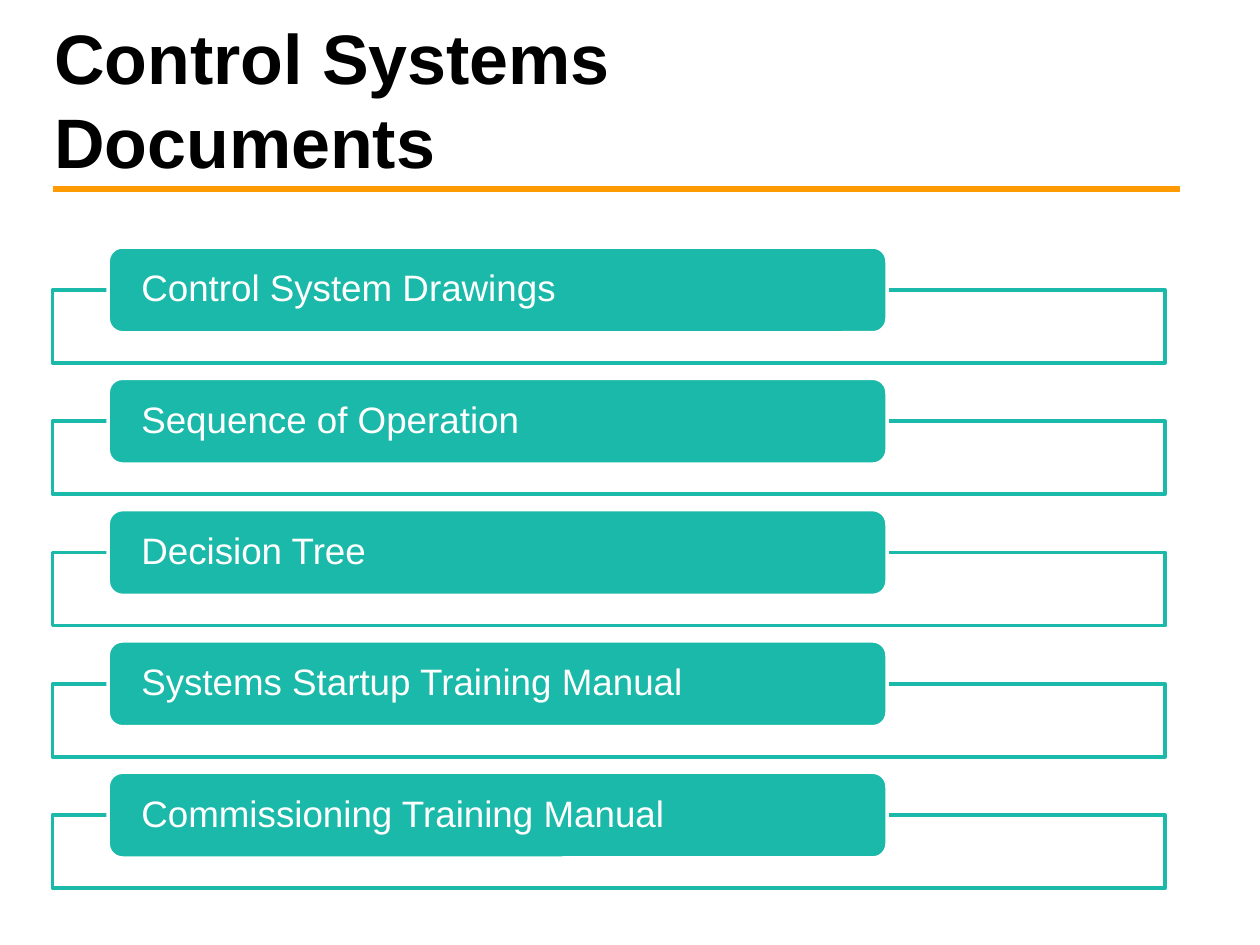
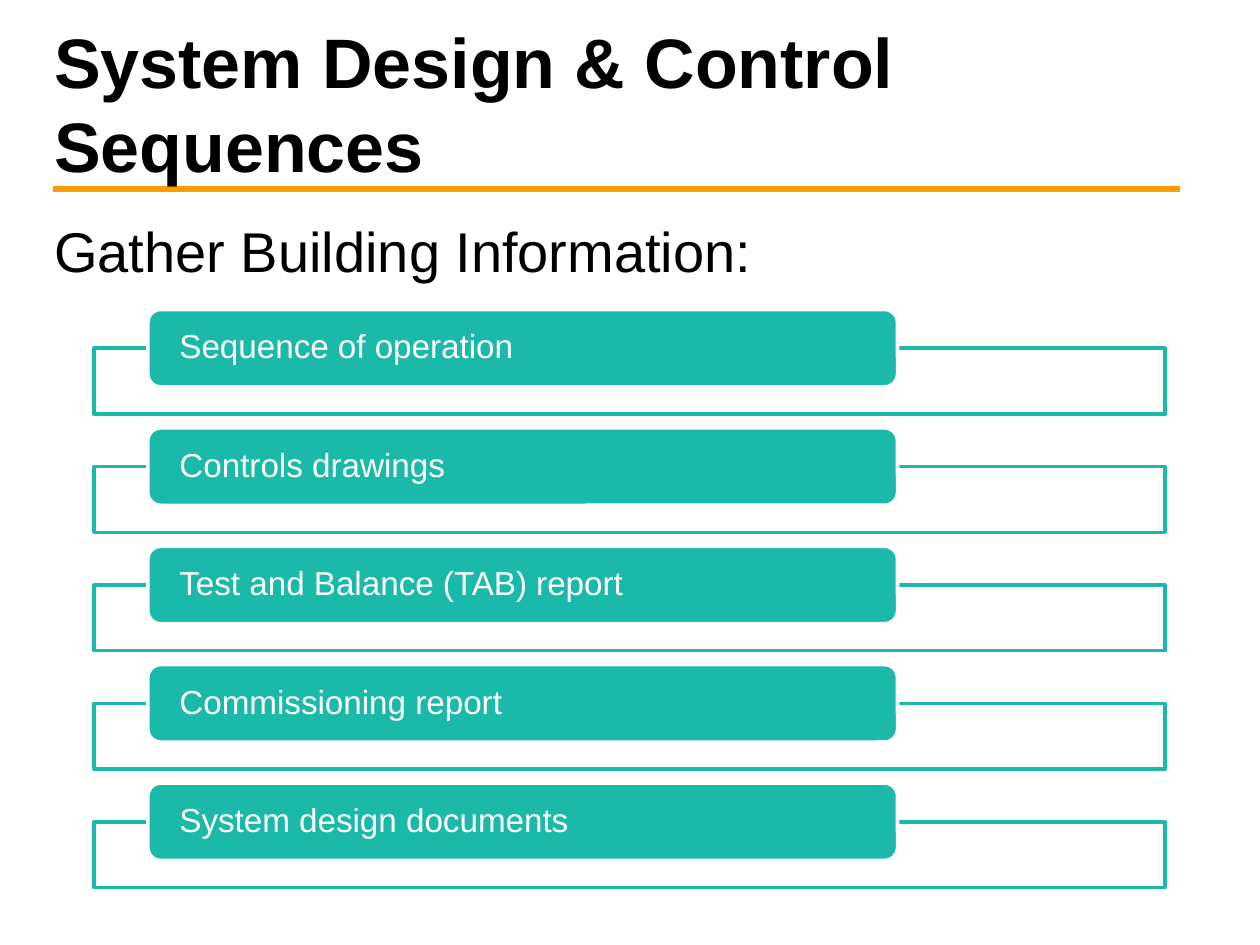
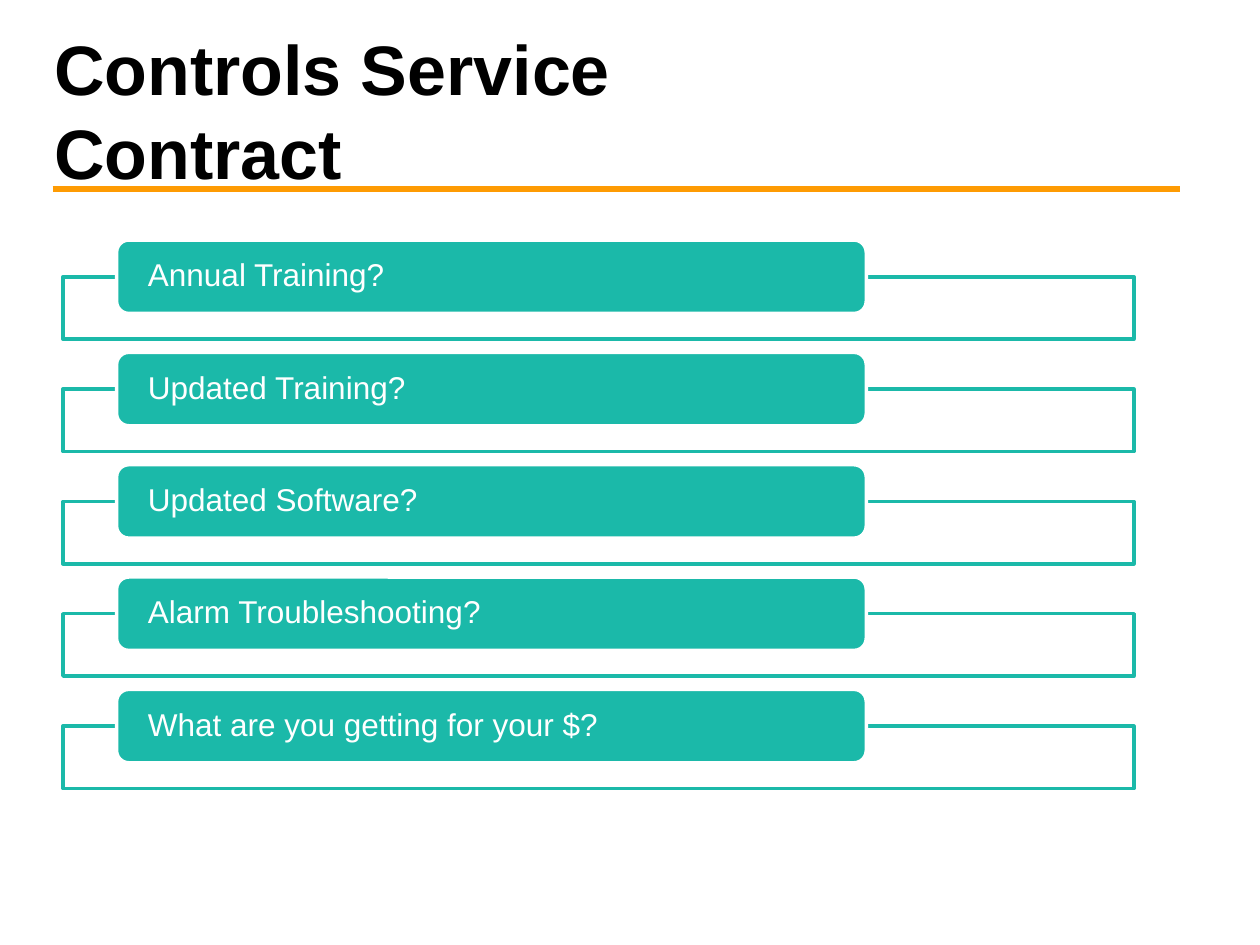
import pptx
import pptx.dml.color
import pptx.enum.shapes
import pptx.enum.text
import pptx.oxml
import pptx.oxml.ns
import pptx.util
from dataclasses import dataclass

Cm, Pt = pptx.util.Cm, pptx.util.Pt
RGB = pptx.dml.color.RGBColor.from_string
SHAPE = pptx.enum.shapes.MSO_SHAPE
ANCHOR = pptx.enum.text.MSO_ANCHOR
LEFT = pptx.enum.text.PP_ALIGN.LEFT
NSDECL = pptx.oxml.ns.nsdecls("a")


@dataclass(frozen=True)
class Theme:
    font: str = "Arial"
    ink: str = "000000"
    paper: str = "FFFFFF"
    teal: str = "1BB9A9"
    orange: str = "FE9B03"
    title_size: int = 40
    body_size: int = 32
    rule_width: int = 4
    outline_width: int = 2


theme = Theme()


def set_text(shape, text, size, color, bold=False, **frame):
    """Write one left-aligned paragraph, with text frame settings as keywords."""
    tf = shape.text_frame
    frame = {"word_wrap": True, "auto_size": pptx.enum.text.MSO_AUTO_SIZE.NONE, **frame}
    for name, value in frame.items():
        setattr(tf, name, value)
    p = tf.paragraphs[0]
    p.alignment, p.space_before = LEFT, Pt(0)
    r = p.add_run()
    r.text = text
    font = {"name": theme.font, "size": Pt(size), "bold": bold}
    for name, value in font.items():
        setattr(r.font, name, value)
    r.font.color.rgb = RGB(color)
    return p


def add_box(s, kind, left, top, width, height, fill, line):
    sp = s.shapes.add_shape(kind, Cm(left), Cm(top), Cm(width), Cm(height))
    sp.shadow.inherit = False
    sp.fill.solid()
    sp.fill.fore_color.rgb = RGB(fill)
    sp.line.color.rgb = RGB(line)
    sp.line.width = Pt(theme.outline_width)
    return sp


# Content: title box and list geometry in cm (left, top, width, height)
slides = [
    {
        "title": "Control Systems Documents",
        "title_box": (0.84, 1.07, 18.42, 2.74),
        "anchor": ANCHOR.BOTTOM,
        "list": {"left": 1.06, "top": 4.98, "width": 22.43, "pill": 1.73, "size": 21},
        "items": [
            "Control System Drawings",
            "Sequence of Operation",
            "Decision Tree",
            "Systems Startup Training Manual",
            "Commissioning Training Manual",
        ],
    },
    {
        "title": "System Design & Control Sequences",
        "title_box": (0.84, 0.69, 18.42, 2.74),
        "anchor": ANCHOR.MIDDLE,
        "body": "Gather Building Information:",
        "list": {"left": 1.9, "top": 6.24, "width": 21.59, "pill": 1.56, "size": 19},
        "items": [
            "Sequence of operation",
            "Controls drawings",
            "Test and Balance (TAB) report",
            "Commissioning report",
            "System design documents",
        ],
    },
    {
        "title": "Controls Service Contract",
        "title_box": (0.84, 2.01, 17.58, 2.01),
        "anchor": ANCHOR.BOTTOM,
        "list": {"left": 1.27, "top": 4.84, "width": 21.59, "pill": 1.48, "size": 18},
        "items": [
            "Annual Training?",
            "Updated Training?",
            "Updated Software?",
            "Alarm Troubleshooting?",
            "What are you getting for your $?",
        ],
    },
]

prs = pptx.Presentation()
prs.slide_width, prs.slide_height = Cm(25.4), Cm(19.05)
TITLE_AND_CONTENT, TITLE_ONLY = prs.slide_layouts[1], prs.slide_layouts[5]

for number, content in enumerate(slides):
    s = prs.slides.add_slide(TITLE_AND_CONTENT if "body" in content else TITLE_ONLY)

    # Title rule, drawn once and moved to the master
    if number == 0:
        rule = s.shapes.add_connector(
            pptx.enum.shapes.MSO_CONNECTOR.STRAIGHT, Cm(1.06), Cm(3.81), Cm(23.78), Cm(3.81))
        rule.line.color.rgb = RGB(theme.orange)
        rule.line.width = Pt(theme.rule_width)
        rule._element.spPr.append(pptx.oxml.parse_xml(f"<a:effectLst {NSDECL}/>"))
        prs.slide_master.shapes._spTree.append(rule._element)

    # Title
    title = s.shapes.title
    title.left, title.top, title.width, title.height = map(Cm, content["title_box"])
    set_text(title, content["title"], theme.title_size, theme.ink, bold=True,
             vertical_anchor=content["anchor"])

    # Lead-in line without a bullet
    if "body" in content:
        body = s.placeholders[1]
        body.left, body.top, body.width, body.height = map(Cm, (0.84, 4.24, 21.59, 11.43))
        p = set_text(body, content["body"], theme.body_size, theme.ink)
        p._p.get_or_add_pPr().append(pptx.oxml.parse_xml(f"<a:buNone {NSDECL}/>"))

    # List: each pill sits on the top edge of its outlined frame
    spec = content["list"]
    left, width, pill_h = spec["left"], spec["width"], spec["pill"]
    for i, item in enumerate(content["items"]):
        top = spec["top"] + i * 1.53 * pill_h
        frame = add_box(s, SHAPE.RECTANGLE, left, top + pill_h / 2, width, 0.85 * pill_h,
                        theme.paper, theme.teal)
        frame.fill._xPr.find(".//" + pptx.oxml.ns.qn("a:srgbClr")).append(
            pptx.oxml.parse_xml(f'<a:alpha {NSDECL} val="90000"/>'))
        pill = add_box(s, SHAPE.ROUNDED_RECTANGLE, left + 0.05 * width, top, 0.7 * width, pill_h,
                       theme.teal, theme.paper)
        inset = Cm(0.026 * width)
        p = set_text(pill, item, spec["size"], theme.paper, vertical_anchor=ANCHOR.MIDDLE,
                     margin_left=inset, margin_right=inset, margin_top=0, margin_bottom=0)
        p.line_spacing = 0.9

prs.save("out.pptx")
